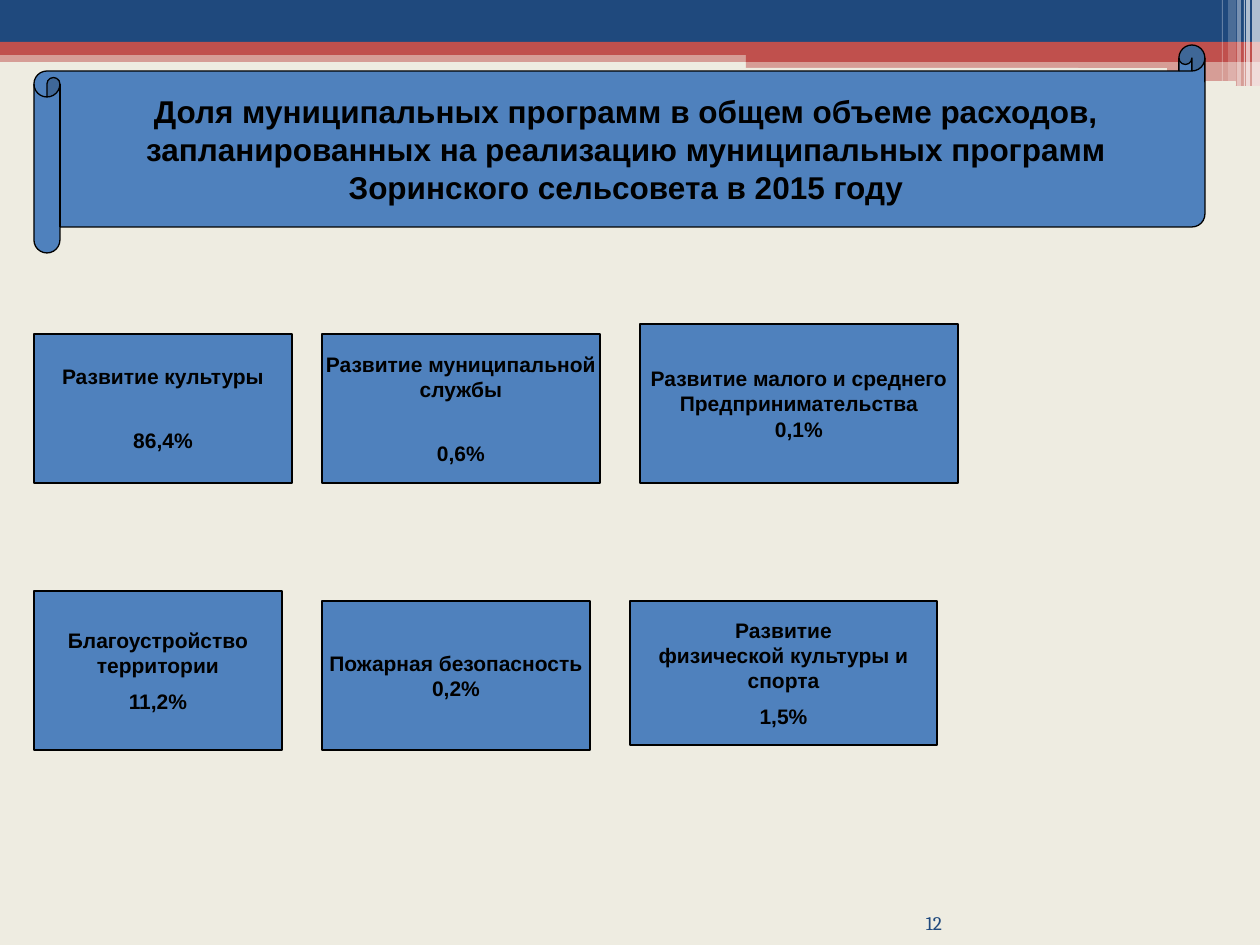
import pptx
import pptx.util
from lxml import etree
from pptx.dml.color import RGBColor
from pptx.enum.shapes import MSO_SHAPE
from pptx.enum.text import MSO_ANCHOR, PP_ALIGN
from pptx.oxml.ns import qn

PX = 914400 / 126
NAVY = RGBColor(0x1F, 0x49, 0x7D)
RED = RGBColor(0xC0, 0x50, 0x4D)
CREAM = RGBColor(0xEE, 0xEC, 0xE1)
BLUE = RGBColor(0x4F, 0x81, 0xBD)
WHITE = RGBColor(0xFF, 0xFF, 0xFF)
BLACK = RGBColor(0, 0, 0)

prs = pptx.Presentation()
prs.slide_width = round(1260 * PX)
prs.slide_height = round(945 * PX)
s = prs.slides.add_slide(prs.slide_layouts[6])
s.background.fill.solid()
s.background.fill.fore_color.rgb = CREAM


def add_shape(kind, box, color, opacity=100, outline=None):
    """Add a flat shape; box is left, top, width, height in px."""
    sp = s.shapes.add_shape(kind, *[round(v * PX) for v in box])
    sp.shadow.inherit = False
    sp.fill.solid()
    sp.fill.fore_color.rgb = color
    if opacity < 100:
        srgb = sp.fill._xPr.find(".//" + qn("a:srgbClr"))
        etree.SubElement(srgb, qn("a:alpha"), val=str(opacity * 1000))
    if outline is None:
        sp.line.fill.background()
    else:
        sp.line.color.rgb = outline
        sp.line.width = pptx.util.Pt(0.75)
    return sp


def write(sp, lines, size=12, font="Arial", color=BLACK, bold=True, align=PP_ALIGN.CENTER,
          anchor=MSO_ANCHOR.MIDDLE, last_gap=0):
    """Write one paragraph per line; last_gap is the space in points above the last."""
    tf = sp.text_frame
    tf.word_wrap = False
    tf.vertical_anchor = anchor
    for i, line in enumerate(lines):
        p = tf.paragraphs[0] if i == 0 else tf.add_paragraph()
        p.alignment = align
        r = p.add_run()
        r.text = line
        r.font.size = pptx.util.Pt(size)
        r.font.name = font
        r.font.bold = bold
        r.font.color.rgb = color
    if last_gap:
        p.space_before = pptx.util.Pt(last_gap)


# Header bands
RECT, ROUND = MSO_SHAPE.RECTANGLE, MSO_SHAPE.ROUNDED_RECTANGLE
for kind, box, color, opacity in [
    (RECT, (0, 50, 1260, 12), RED, 50),
    (RECT, (0, 0, 1260, 42), NAVY, 100),
    (RECT, (0, 42, 1260, 13), RED, 100),
    (RECT, (746, 49, 514, 13), RED, 100),
    (RECT, (746, 61, 514, 25), RED, 50),
    (ROUND, (745, 68, 422, 4), CREAM, 100),
    (ROUND, (1016, 81, 220, 5), CREAM, 100),
]:
    add_shape(kind, box, color, opacity)

# Light stripes in the top right corner: left, width, height, opacity
for left, width, height, opacity in [
    (1252, 8, 86, 65), (1246, 4, 86, 65), (1244, 1, 86, 60),
    (1237, 4, 86, 40), (1228, 8, 81, 20), (1222, 1, 81, 30),
]:
    add_shape(RECT, (left, 0, width, height), WHITE, opacity)

# Page number
number = s.shapes.add_textbox(*[round(v * PX) for v in (862, 903, 80, 31)])
tf = number.text_frame
tf.margin_left = tf.margin_right = tf.margin_top = tf.margin_bottom = 0
write(number, ["12"], size=11, font="Cambria", color=NAVY, bold=False,
      align=PP_ALIGN.RIGHT, anchor=MSO_ANCHOR.BOTTOM)

# Programmes and their shares
for box, lines, gap in [
    ((34, 334, 258, 149), ["Развитие культуры", "86,4%"], 22),
    ((322, 334, 278, 149), ["Развитие муниципальной", "службы", "0,6%"], 22),
    ((640, 324, 318, 159), ["Развитие малого и среднего", "Предпринимательства", "0,1%"], 0),
    ((34, 591, 248, 159), ["Благоустройство", "территории", "11,2%"], 6),
    ((322, 601, 268, 149), ["Пожарная безопасность", "0,2%"], 0),
    ((630, 601, 307, 144), ["Развитие", "физической культуры и", "спорта", "1,5%"], 6),
]:
    sp = add_shape(MSO_SHAPE.FLOWCHART_PROCESS, box, BLUE, outline=BLACK)
    write(sp, lines, last_gap=gap)

# Title scroll
scroll = add_shape(MSO_SHAPE.HORIZONTAL_SCROLL, (34, 45, 1171, 208), BLUE, outline=BLACK)
write(scroll, [
    "Доля муниципальных программ в общем объеме расходов,",
    "запланированных на реализацию муниципальных программ",
    "Зоринского сельсовета в 2015 году",
], size=18)

prs.save("out.pptx")
